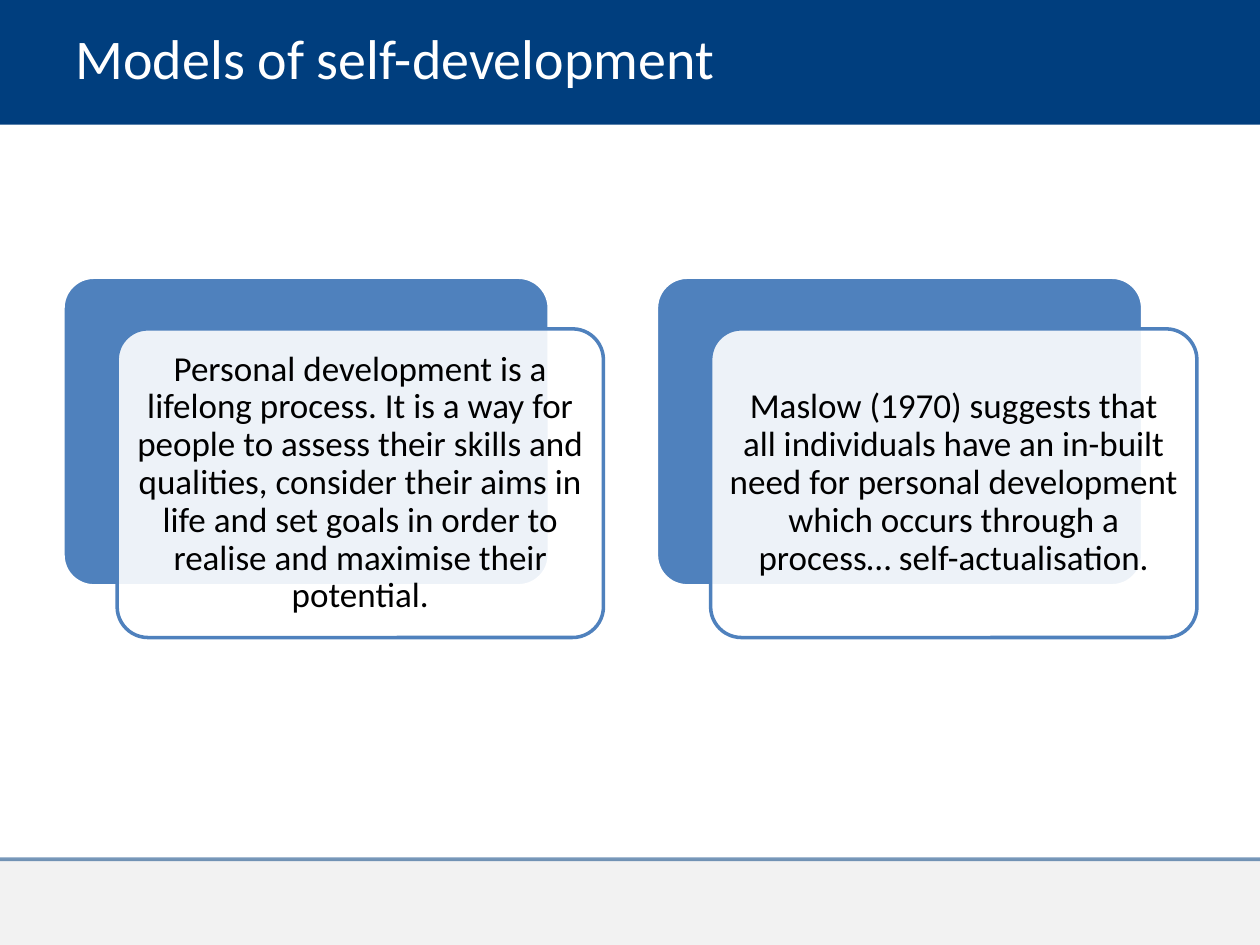
from lxml import etree
from pptx import Presentation
from pptx.dml.color import RGBColor
from pptx.enum.shapes import MSO_CONNECTOR, MSO_SHAPE
from pptx.enum.text import MSO_ANCHOR, MSO_AUTO_SIZE, PP_ALIGN
from pptx.oxml.ns import qn
from pptx.util import Inches, Pt

RECT, ROUNDED = MSO_SHAPE.RECTANGLE, MSO_SHAPE.ROUNDED_RECTANGLE
STRAIGHT = MSO_CONNECTOR.STRAIGHT
MIDDLE = MSO_ANCHOR.MIDDLE
LEFT, CENTER = PP_ALIGN.LEFT, PP_ALIGN.CENTER
NO_AUTOFIT = MSO_AUTO_SIZE.NONE

NAVY = RGBColor(0x00, 0x3E, 0x7E)
BLUE = RGBColor(0x4F, 0x81, 0xBD)
GREY = RGBColor(0x80, 0x80, 0x80)
WHITE = RGBColor(0xFF, 0xFF, 0xFF)
BLACK = RGBColor(0x00, 0x00, 0x00)

SLIDE_W, SLIDE_H = 10, 7.5
FOOTER_TOP = 6.82
CARD_W, CARD_H = 3.86, 2.45
CARD_LEFT, CARD_TOP, CARD_PITCH = 0.5, 2.2, 4.71
FRONT_DX, FRONT_DY = 0.43, 0.41

STATEMENTS = [
    "Personal development is a lifelong process. It is a way for people to "
    "assess their skills and qualities, consider their aims in life and set "
    "goals in order to realise and maximise their potential.",
    "Maslow (1970) suggests that all individuals have an in-built need for "
    "personal development which occurs through a process… self-actualisation.",
]


def set_opacity(parent, percent):
    """Add an alpha value to the solid colour found under an element."""
    color = parent.find(".//" + qn("a:srgbClr"))
    etree.SubElement(color, qn("a:alpha")).set("val", str(percent * 1000))


class SlideBuilder:
    font_name = "Calibri"
    line_spacing = 0.9

    def __init__(self, slide):
        self.slide = slide
        self.shapes = slide.shapes

    def set_text(self, shape, text, size, color, align):
        frame = shape.text_frame
        frame.word_wrap = True
        frame.auto_size = NO_AUTOFIT
        frame.vertical_anchor = MIDDLE
        paragraph = frame.paragraphs[0]
        paragraph.text = text
        paragraph.alignment = align
        paragraph.line_spacing = self.line_spacing
        paragraph.font.name = self.font_name
        paragraph.font.size = Pt(size)
        paragraph.font.color.rgb = color

    def title(self, text, left, top, width, height):
        heading = self.shapes.title
        heading.left, heading.top = Inches(left), Inches(top)
        heading.width, heading.height = Inches(width), Inches(height)
        self.set_text(heading, text, 32, WHITE, LEFT)
        # Bring the title in front of the bands drawn so far
        self.shapes._spTree.append(heading._element)

    def block(self, kind, left, top, width, height, fill, outline=None, opacity=100):
        block = self.shapes.add_shape(
            kind, Inches(left), Inches(top), Inches(width), Inches(height))
        block.shadow.inherit = False
        block.fill.solid()
        block.fill.fore_color.rgb = fill
        if opacity < 100:
            set_opacity(block._element.spPr.find(qn("a:solidFill")), opacity)
        if outline is None:
            block.line.fill.background()
        else:
            block.line.color.rgb = outline
            block.line.width = Pt(2)
        return block

    def rule(self, top, color, width, opacity):
        rule = self.shapes.add_connector(
            STRAIGHT, 0, Inches(top), Inches(SLIDE_W), Inches(top))
        rule.line.color.rgb = color
        rule.line.width = Pt(width)
        properties = rule._element.spPr
        set_opacity(properties, opacity)
        etree.SubElement(properties, qn("a:effectLst"))

    def card(self, text, left, top):
        back = self.block(ROUNDED, left, top, CARD_W, CARD_H, BLUE, WHITE)
        front = self.block(ROUNDED, left + FRONT_DX, top + FRONT_DY,
                           CARD_W, CARD_H, WHITE, BLUE, opacity=90)
        for layer in (back, front):
            layer.adjustments[0] = 0.1
        frame = front.text_frame
        frame.margin_left = frame.margin_right = Inches(0.08)
        frame.margin_top = frame.margin_bottom = Inches(0.08)
        self.set_text(front, text, 20, BLACK, CENTER)


def main():
    prs = Presentation()
    prs.slide_width, prs.slide_height = Inches(SLIDE_W), Inches(SLIDE_H)
    title_only = prs.slide_layouts[5]
    builder = SlideBuilder(prs.slides.add_slide(title_only))

    # Header and footer bands
    builder.block(RECT, 0, 0, SLIDE_W, 0.99, NAVY)
    builder.block(RECT, 0, FOOTER_TOP, SLIDE_W, SLIDE_H - FOOTER_TOP, GREY, opacity=10)
    builder.rule(FOOTER_TOP, NAVY, 2.25, opacity=52)

    # Title
    builder.title("Models of self-development", 0.5, 0.14, 6.94, 0.69)

    # Layered statement cards
    for column, statement in enumerate(STATEMENTS):
        builder.card(statement, CARD_LEFT + column * CARD_PITCH, CARD_TOP)

    prs.save("out.pptx")


if __name__ == "__main__":
    main()
